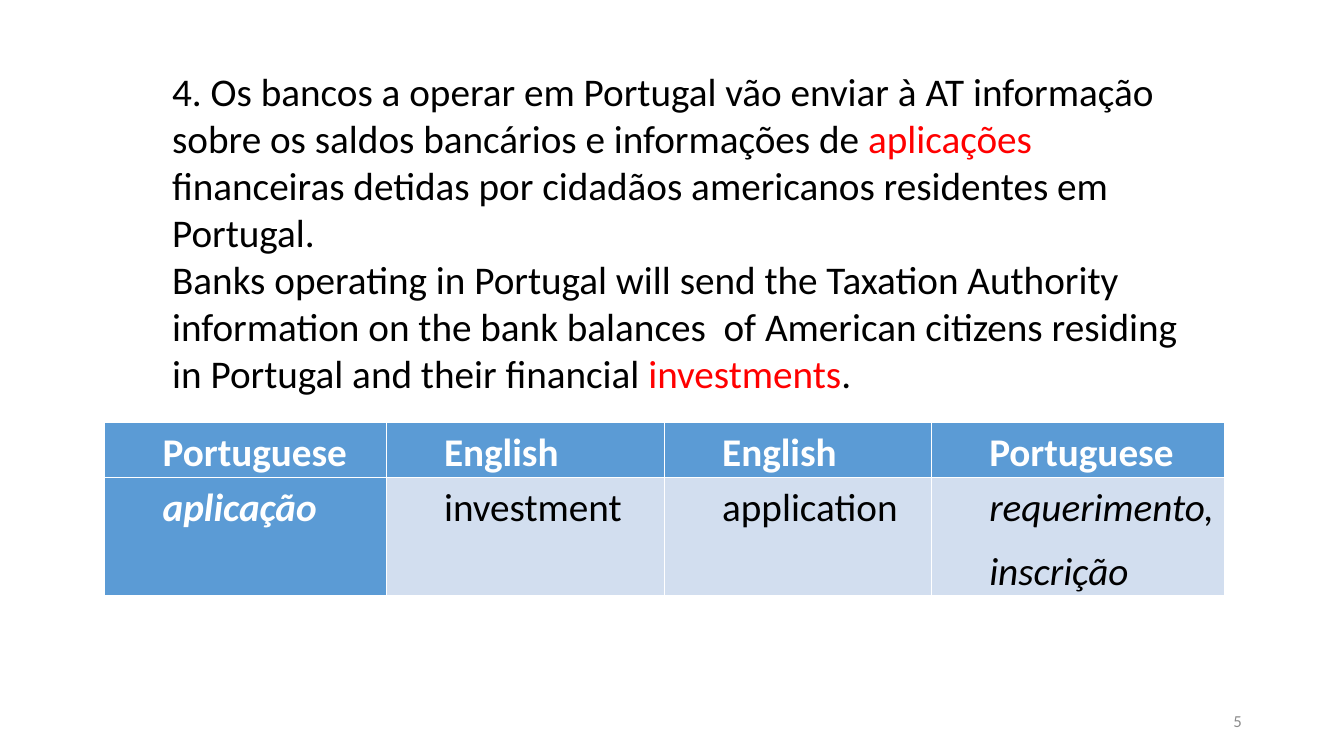
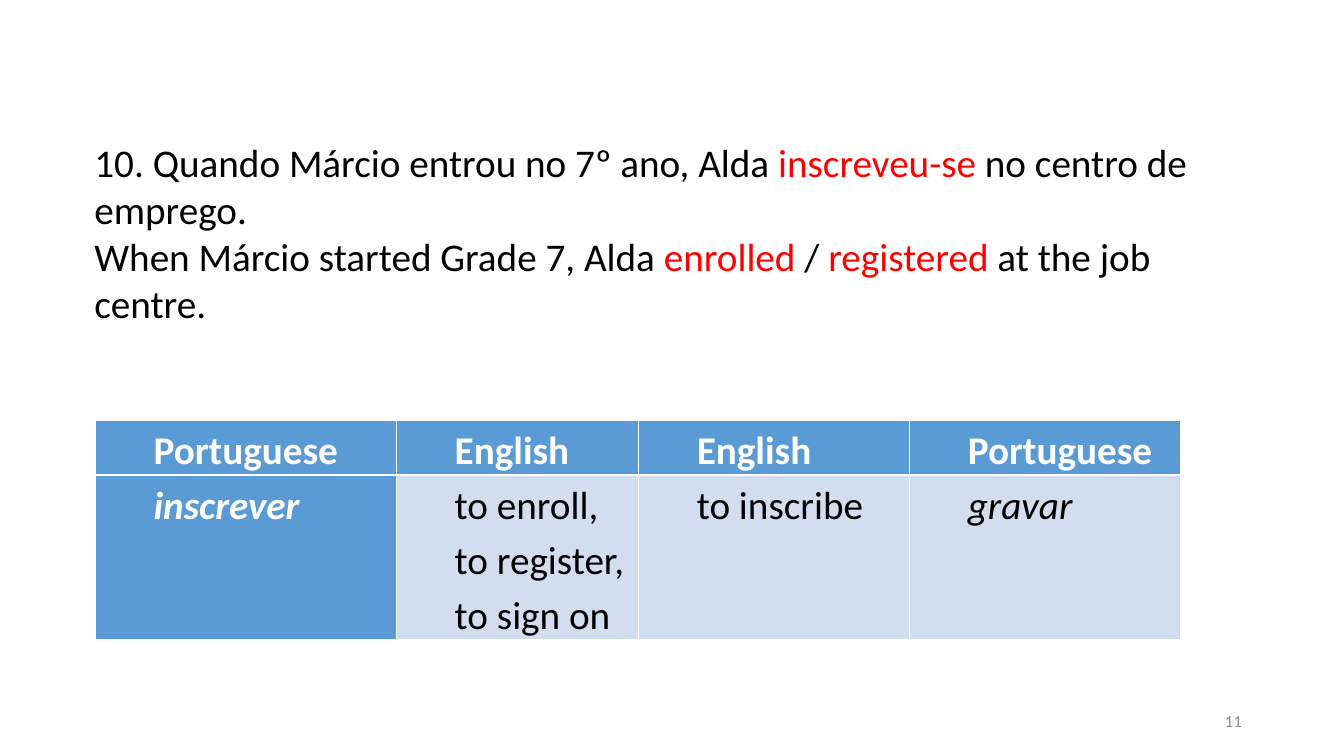
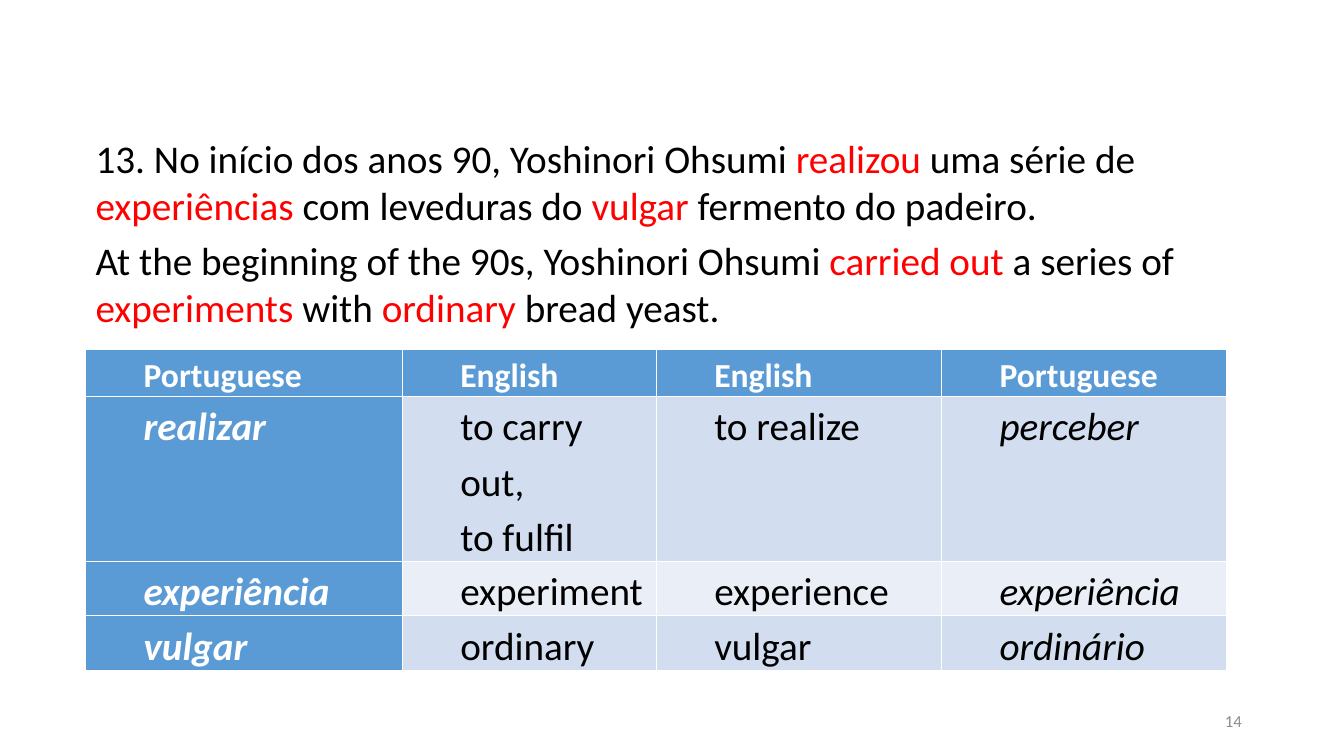
from dataclasses import dataclass

from pptx import Presentation
from pptx.dml.color import RGBColor
from pptx.enum.text import MSO_ANCHOR as Anchor, MSO_AUTO_SIZE as Fit, PP_ALIGN as Align
from pptx.util import Cm, Pt

# Shared style
FONT = "Calibri"
BLACK, WHITE, RED, GREY = "000000", "FFFFFF", "FF0000", "8C8C8C"
BLUE, BANDS = "5B9BD5", ("D2DEEF", "EAEFF7")
HEADS = ("Portuguese", "English", "English", "Portuguese")
BODY = 28


@dataclass
class Box:
    left: float
    top: float
    width: float
    height: float

    def area(self) -> tuple:
        return Cm(self.left), Cm(self.top), Cm(self.width), Cm(self.height)


@dataclass
class Grid:
    left: float
    top: float
    cols: tuple
    heights: tuple
    rows: tuple
    head: int = BODY
    spaced: bool = False


@dataclass
class Page:
    number: int
    box: Box
    texts: tuple  # words between asterisks are red
    grid: Grid
    gap: int = 0


NUMBER = Box(23.93, 17.65, 7.62, 1.02)

PAGES = (
    Page(
        5,
        Box(4.09, 1.52, 26.39, 8.64),
        (
            "4. Os bancos a operar em Portugal vão enviar à AT informação sobre os "
            "saldos bancários e informações de *aplicações* financeiras detidas por "
            "cidadãos americanos residentes em Portugal.",
            "Banks operating in Portugal will send the Taxation Authority information "
            "on the bank balances  of American citizens residing in Portugal and "
            "their financial *investments*.",
        ),
        Grid(
            2.64, 10.64, (7.09, 7.01, 6.73, 7.39), (1.38, 2.95),
            (("aplicação", "investment", "application", "requerimento,\ninscrição"),),
            spaced=True,
        ),
    ),
    Page(
        11,
        Box(2.13, 3.33, 28.35, 5.05),
        (
            "10. Quando Márcio entrou no 7º ano, Alda *inscreveu-se* no centro de emprego.",
            "When Márcio started Grade 7, Alda *enrolled* / *registered* at the job centre.",
        ),
        Grid(
            2.41, 10.59, (7.59, 6.1, 6.83, 6.83), (1.38, 4.15),
            (("inscrever", "to enroll, to register, to sign on", "to inscribe", "gravar"),),
        ),
    ),
    Page(
        14,
        Box(2.16, 3.23, 28.32, 5.26),
        (
            "13. No início dos anos 90, Yoshinori Ohsumi *realizou* uma série de "
            "*experiências* com leveduras do *vulgar* fermento do padeiro.",
            "At the beginning of the 90s, Yoshinori Ohsumi *carried out* a series of "
            "*experiments* with *ordinary* bread yeast.",
        ),
        Grid(
            2.16, 8.81, (7.98, 6.4, 7.19, 7.19), (1.18, 4.15, 1.38, 1.38),
            (
                ("realizar", "to carry out,\nto fulfil", "to realize", "perceber"),
                ("experiência", "experiment", "experience", "experiência"),
                ("vulgar", "ordinary", "vulgar", "ordinário"),
            ),
            head=24,
        ),
        gap=6,
    ),
)


def paint(target, color: str) -> None:
    """Colour a font or a fill."""
    if hasattr(target, "solid"):
        target.solid()
        target.fore_color.rgb = RGBColor.from_string(color)
    else:
        target.color.rgb = RGBColor.from_string(color)


def style(para, size: int, color: str, bold: bool = False, slant: bool = False) -> None:
    font = para.font
    font.name, font.size, font.bold, font.italic = FONT, Pt(size), bold, slant
    paint(font, color)


def add_box(slide, box: Box):
    frame = slide.shapes.add_textbox(*box.area()).text_frame
    frame.word_wrap = True
    frame.vertical_anchor = Anchor.MIDDLE
    return frame


def add_texts(slide, page: Page) -> None:
    frame = add_box(slide, page.box)
    frame.auto_size = Fit.SHAPE_TO_FIT_TEXT
    for i, text in enumerate(page.texts):
        para = frame.add_paragraph() if i else frame.paragraphs[0]
        style(para, BODY, BLACK)
        if i:
            para.space_before = Pt(page.gap)
        for j, part in enumerate(text.split("*")):
            run = para.add_run()
            run.text = part
            if j % 2:
                paint(run.font, RED)


def fill_cell(cell, text: str, row: int, col: int, grid: Grid) -> None:
    head, key = row == 0, row == 0 or col == 0
    paint(cell.fill, BLUE if key else BANDS[(row - 1) % 2])
    cell.margin_left = cell.margin_right = Cm(0.19)
    cell.margin_top = cell.margin_bottom = 0
    frame = cell.text_frame
    frame.text = text
    for i, para in enumerate(frame.paragraphs):
        style(para, grid.head if head else BODY, WHITE if key else BLACK,
              bold=key, slant=not head and col in (0, 3))
        para.line_spacing = 1.15
        para._p.get_or_add_pPr().set("marL", str(Cm(1.27)))
        if i == 0 and (head or grid.spaced):
            para.space_before = para.space_after = Pt(6)
            if head or col < 3:
                para.alignment = Align.JUSTIFY


def add_grid(slide, grid: Grid) -> None:
    rows = (HEADS, *grid.rows)
    area = Box(grid.left, grid.top, sum(grid.cols), sum(grid.heights)).area()
    table = slide.shapes.add_table(len(rows), len(HEADS), *area).table
    table.first_col = True
    for col, width in zip(table.columns, grid.cols):
        col.width = Cm(width)
    for r, (texts, height) in enumerate(zip(rows, grid.heights)):
        table.rows[r].height = Cm(height)
        for c, text in enumerate(texts):
            fill_cell(table.cell(r, c), text, r, c, grid)


def add_number(slide, number: int) -> None:
    para = add_box(slide, NUMBER).paragraphs[0]
    para.text = str(number)
    para.alignment = Align.RIGHT
    style(para, 12, GREY)


def main() -> None:
    deck = Presentation()
    deck.slide_width, deck.slide_height = Cm(33.87), Cm(19.05)
    for page in PAGES:
        slide = deck.slides.add_slide(deck.slide_layouts[6])
        add_grid(slide, page.grid)
        add_texts(slide, page)
        add_number(slide, page.number)
    deck.save("out.pptx")


if __name__ == "__main__":
    main()
